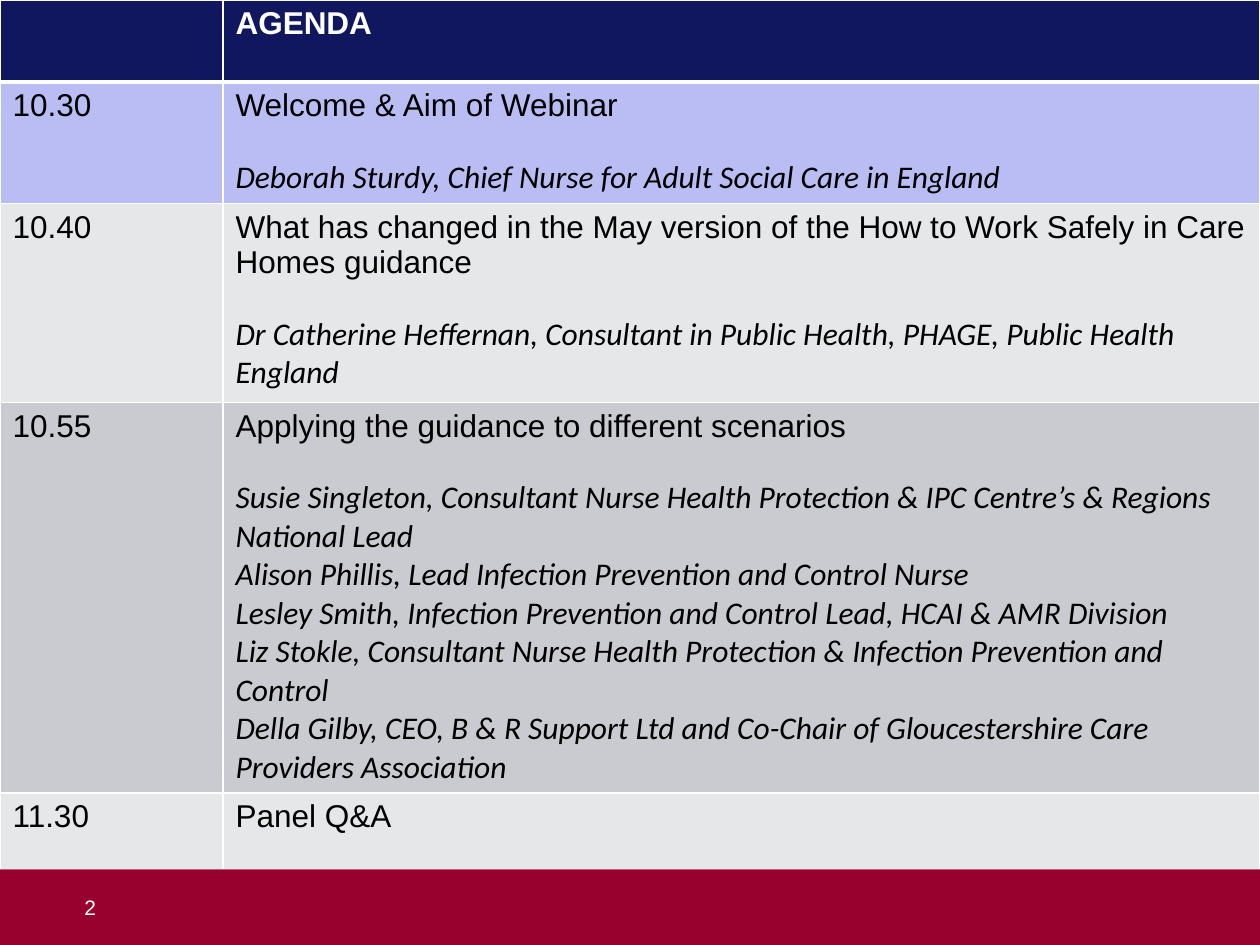
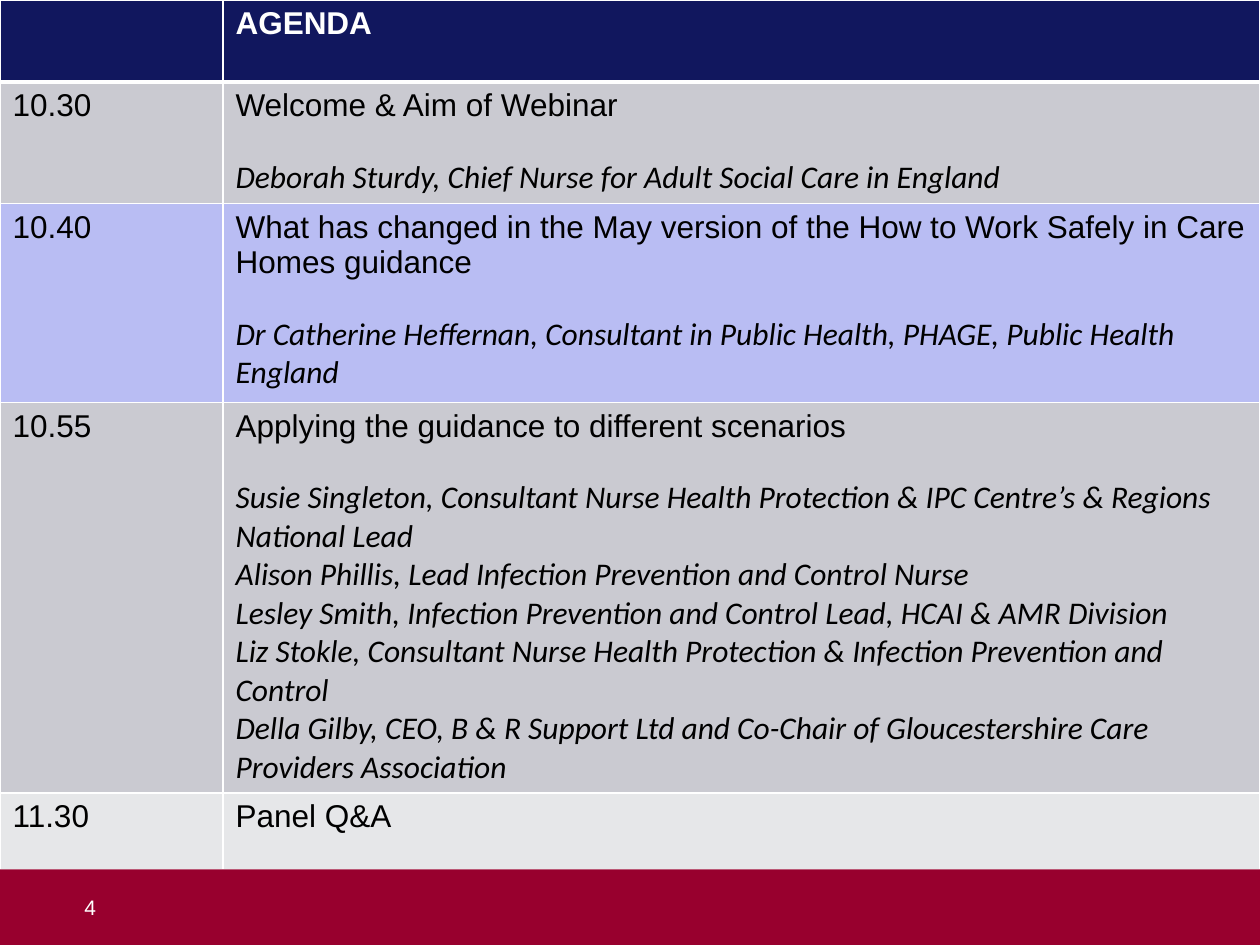
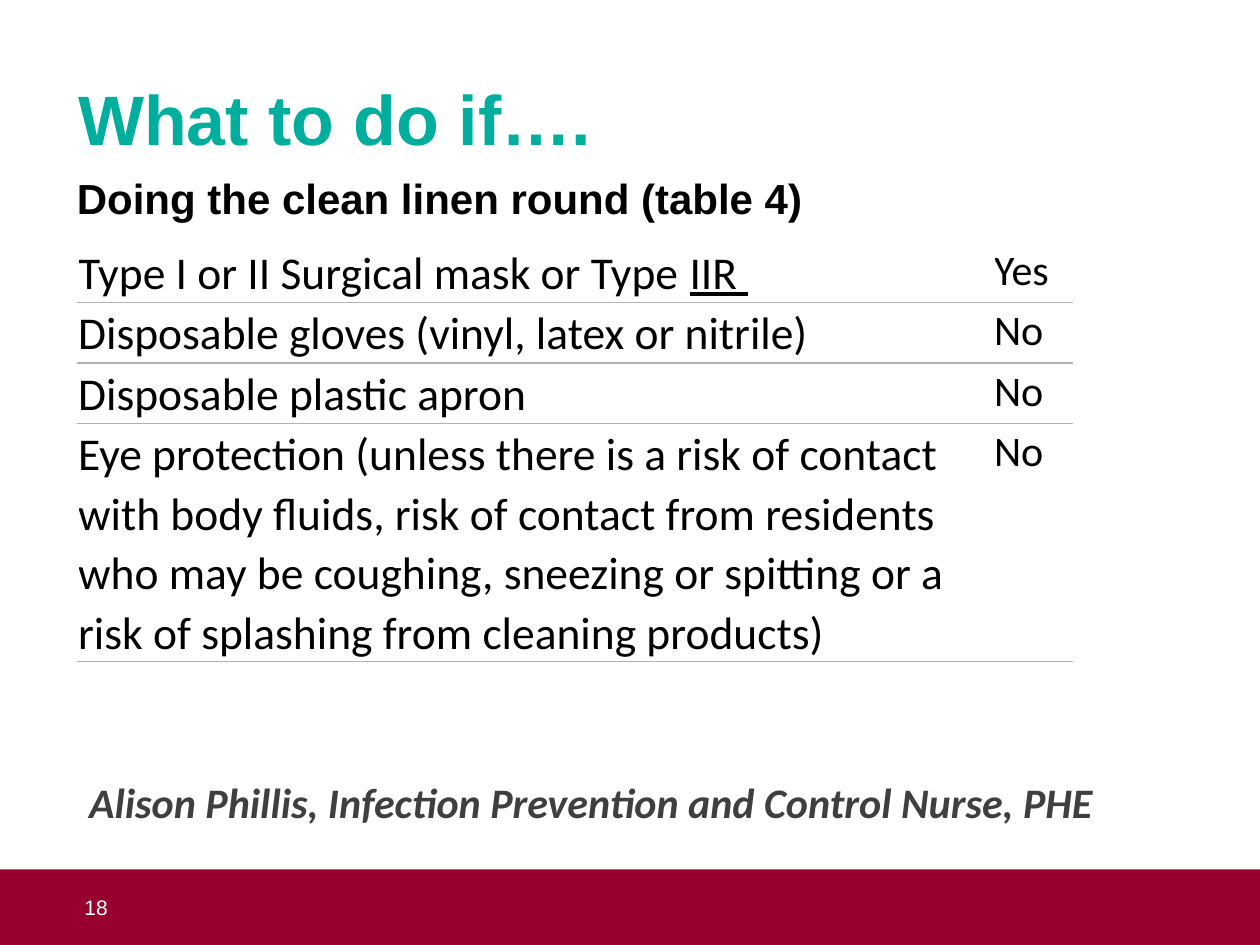
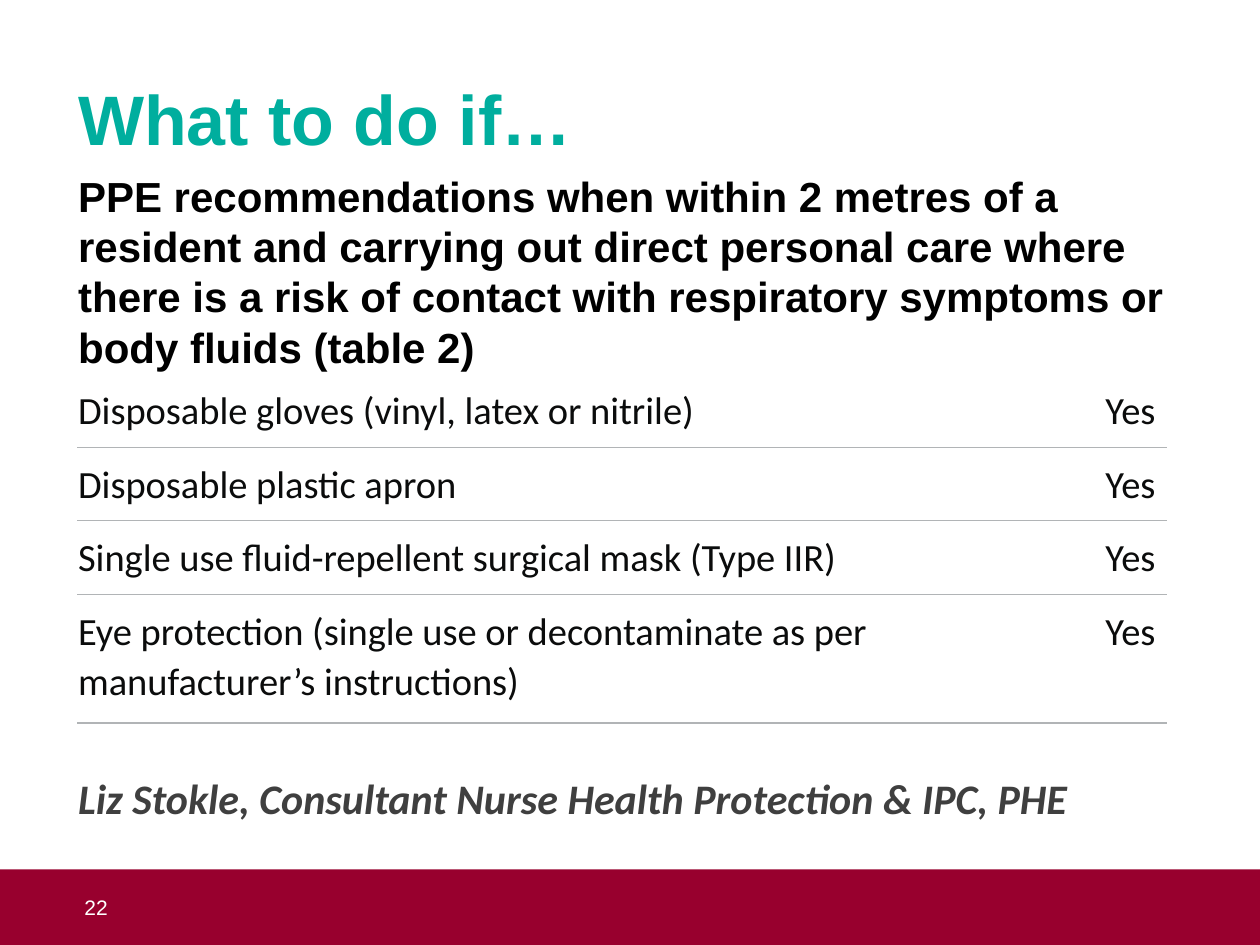
from pptx import Presentation
from pptx.dml.color import RGBColor
from pptx.enum.shapes import MSO_SHAPE
from pptx.enum.text import MSO_ANCHOR, MSO_AUTO_SIZE, PP_ALIGN
from pptx.oxml.ns import qn
from pptx.util import Inches, Pt
from lxml import etree

RECTANGLE = MSO_SHAPE.RECTANGLE
TOP, MIDDLE = MSO_ANCHOR.TOP, MSO_ANCHOR.MIDDLE
NO_AUTOFIT = MSO_AUTO_SIZE.NONE
LEFT, RIGHT = PP_ALIGN.LEFT, PP_ALIGN.RIGHT

COLORS = {
    "white": "FFFFFF",
    "black": "000000",
    "ink": "0B0C0C",
    "header": "11175E",
    "current": "B9BDF3",
    "odd": "CACAD1",
    "even": "E6E7E9",
    "band": "98002E",
    "title": "00AE9E",
    "presenter": "3F3F3F",
    "rule": "B1B4B6",
}

AGENDA = [
    ("10.30", "Welcome & Aim of Webinar", [
        "Deborah Sturdy, Chief Nurse for Adult Social Care in England",
    ]),
    ("10.40", "What has changed in the May version of the How to Work Safely in Care Homes guidance", [
        "Dr Catherine Heffernan, Consultant in Public Health, PHAGE, Public Health England",
    ]),
    ("10.55", "Applying the guidance to different scenarios", [
        "Susie Singleton, Consultant Nurse Health Protection & IPC Centre’s & Regions National Lead",
        "Alison Phillis, Lead Infection Prevention and Control Nurse",
        "Lesley Smith, Infection Prevention and Control Lead, HCAI & AMR Division",
        "Liz Stokle, Consultant Nurse Health Protection & Infection Prevention and Control",
        "Della Gilby, CEO, B & R Support Ltd and Co-Chair of Gloucestershire Care Providers Association",
    ]),
    ("11.30", "Panel Q&A", []),
]
AGENDA_ROWS = [0.65, 0.96, 1.58, 3.1, 0.61]

LINEN_ROUND = [
    ("Type I or II Surgical mask or Type |IIR ", "Yes"),
    ("Disposable gloves (vinyl, latex or nitrile)", "No"),
    ("Disposable plastic apron", "No"),
    ("Eye protection (unless there is a risk of contact with body fluids, risk of contact from "
     "residents who may be coughing, sneezing or spitting or a risk of splashing from "
     "cleaning products)", "No"),
]
PERSONAL_CARE = [
    ("Disposable gloves (vinyl, latex or nitrile)", "Yes"),
    ("Disposable plastic apron", "Yes"),
    ("Single use fluid-repellent surgical mask (Type IIR)", "Yes"),
    ("Eye protection (single use or decontaminate as per manufacturer’s instructions)", "Yes"),
]


def rgb(color):
    return RGBColor.from_string(COLORS[color])


def style(paragraph, size, color="black", font="Arial", bold=False, italic=False,
          spacing=1.0, before=0, align=LEFT):
    paragraph.font.size = Pt(size)
    paragraph.font.name = font
    paragraph.font.bold = bold
    paragraph.font.italic = italic
    paragraph.font.color.rgb = rgb(color)
    paragraph.line_spacing = spacing
    paragraph.space_before = Pt(before)
    paragraph.space_after = Pt(0)
    paragraph.alignment = align


def style_presenter(paragraph, **options):
    style(paragraph, 24, "presenter", "Calibri", bold=True, italic=True, **options)


def write(paragraph, text):
    plain, _, underlined = text.partition("|")
    paragraph.add_run().text = plain
    if underlined:
        run = paragraph.add_run()
        run.text = underlined
        run.font.underline = True


def remove_bullet(paragraph):
    properties = paragraph._p.get_or_add_pPr()
    properties.set("marL", "0")
    properties.set("indent", "0")
    etree.SubElement(properties, qn("a:buNone"))


def set_margins(target, left=0, top=0, right=0, bottom=0):
    target.margin_left = Inches(left)
    target.margin_top = Inches(top)
    target.margin_right = Inches(right)
    target.margin_bottom = Inches(bottom)


def place(shape, left, top, width, height):
    shape.left, shape.top = Inches(left), Inches(top)
    shape.width, shape.height = Inches(width), Inches(height)


def set_borders(cell, **borders):
    properties = cell._tc.get_or_add_tcPr()
    for edge in "LRTB":
        color, width = borders.get(edge, ("white", 1))
        line = etree.SubElement(properties, qn("a:ln" + edge), w=str(Pt(width)))
        fill = etree.SubElement(line, qn("a:solidFill"))
        etree.SubElement(fill, qn("a:srgbClr"), val=COLORS[color])


def fill_cell(cell, color):
    cell.fill.solid()
    cell.fill.fore_color.rgb = rgb(color)


def add_grid(slide, left, top, widths, heights):
    frame = slide.shapes.add_table(len(heights), len(widths), Inches(left), Inches(top),
                                   Inches(sum(widths)), Inches(sum(heights)))
    grid = frame.table
    grid.first_row = grid.horz_banding = False
    for column, width in zip(grid.columns, widths):
        column.width = Inches(width)
    for row, height in zip(grid.rows, heights):
        row.height = Inches(height)
    return grid


def add_footer(slide, number):
    band = slide.shapes.add_shape(RECTANGLE, Inches(0), Inches(6.9), Inches(10), Inches(0.6))
    band.shadow.inherit = False
    band.fill.solid()
    band.fill.fore_color.rgb = rgb("band")
    band.line.fill.background()
    set_margins(band.text_frame, left=0.67, right=0.1)
    band.text_frame.vertical_anchor = MIDDLE
    page = band.text_frame.paragraphs[0]
    page.text = str(number)
    style(page, 12, "white")


def add_agenda_slide(deck, number, current):
    slide = deck.slides.add_slide(deck.slide_layouts[6])
    grid = add_grid(slide, 0, 0, [1.77, 8.23], AGENDA_ROWS)
    for cell in grid.rows[0].cells:
        set_borders(cell, B=("white", 3))
        fill_cell(cell, "header")
        style(cell.text_frame.paragraphs[0], 18, "white", bold=True)
    grid.cell(0, 1).text_frame.paragraphs[0].text = "AGENDA"

    for index, (time, topic, speakers) in enumerate(AGENDA, 1):
        color = "current" if time == current else "odd" if index % 2 else "even"
        for cell, text in zip(grid.rows[index].cells, (time, topic)):
            set_borders(cell, T=("white", 3 if index == 1 else 1))
            fill_cell(cell, color)
            paragraph = cell.text_frame.paragraphs[0]
            paragraph.text = text
            style(paragraph, 18)
        for position, speaker in enumerate(speakers):
            paragraph = grid.cell(index, 1).text_frame.add_paragraph()
            paragraph.text = speaker
            style(paragraph, 18, font="Calibri", italic=True, before=0 if position else 20)
    add_footer(slide, number)


def add_guidance_slide(deck, number, title, heading, heading_box, spacing):
    slide = deck.slides.add_slide(deck.slide_layouts[1])
    title_shape, heading_shape = slide.shapes.title, slide.placeholders[1]
    parts = [
        (title_shape, title, (0.62, 0.6, 8.78, 0.71)),
        (heading_shape, heading, heading_box),
    ]
    for shape, text, box in parts:
        place(shape, *box)
        shape.text_frame.text = text
        shape.text_frame.auto_size = NO_AUTOFIT
        shape.text_frame.vertical_anchor = TOP
        set_margins(shape.text_frame)
    style(title_shape.text_frame.paragraphs[0], 40, "title", bold=True)
    paragraph = heading_shape.text_frame.paragraphs[0]
    style(paragraph, 24, bold=True, spacing=spacing)
    remove_bullet(paragraph)
    add_footer(slide, number)
    return slide


def add_ppe_table(slide, items, top, widths, heights, sizes, color="black",
                  padding=0, answer_align=LEFT):
    grid = add_grid(slide, 0.62, top, widths, heights)
    for index, item in enumerate(items):
        for cell, text, size, align in zip(grid.rows[index].cells, item, sizes,
                                           (LEFT, answer_align)):
            rule = ("rule", 1)
            set_borders(cell, T=rule if index else ("white", 1), B=rule)
            fill_cell(cell, "white")
            set_margins(cell, top=padding, right=padding, bottom=padding)
            paragraph = cell.text_frame.paragraphs[0]
            write(paragraph, text)
            style(paragraph, size, color, "Calibri", spacing=1.07, align=align)


def add_presenter_box(slide, presenter):
    box = slide.shapes.add_textbox(Inches(0.61), Inches(6.11), Inches(8.24), Inches(0.5))
    box.text_frame.word_wrap = True
    paragraph = box.text_frame.paragraphs[0]
    paragraph.text = presenter
    style_presenter(paragraph)


def add_presenter_line(slide, presenter):
    paragraph = slide.placeholders[1].text_frame.add_paragraph()
    paragraph.text = presenter
    style_presenter(paragraph, spacing=1.14, before=225)
    remove_bullet(paragraph)


def main():
    deck = Presentation()
    deck.slide_width, deck.slide_height = Inches(10), Inches(7.5)

    add_agenda_slide(deck, 2, "10.30")
    add_agenda_slide(deck, 4, "10.40")

    linen = add_guidance_slide(deck, 18, "What to do if….", "Doing the clean linen round (table 4)",
                               (0.61, 1.31, 8.72, 0.79), 1.14)
    add_ppe_table(linen, LINEN_ROUND, 1.92, [7.27, 0.62], [0.48, 0.48, 0.48, 1.89], (26, 24))
    add_presenter_box(linen, "Alison Phillis, Infection Prevention and Control Nurse, PHE")

    care = add_guidance_slide(
        deck, 22, "What to do if…",
        "PPE recommendations when within 2 metres of a resident and carrying out direct personal "
        "care where there is a risk of contact with respiratory symptoms or body fluids (table 2)",
        (0.62, 1.35, 8.78, 2.4), 1.0)
    add_presenter_line(care, "Liz Stokle, Consultant Nurse Health Protection & IPC, PHE")
    add_ppe_table(care, PERSONAL_CARE, 2.96, [6.51, 2.13], [0.59, 0.58, 0.59, 1.02], (22, 22),
                  color="ink", padding=0.09, answer_align=RIGHT)

    deck.save("out.pptx")


if __name__ == "__main__":
    main()
